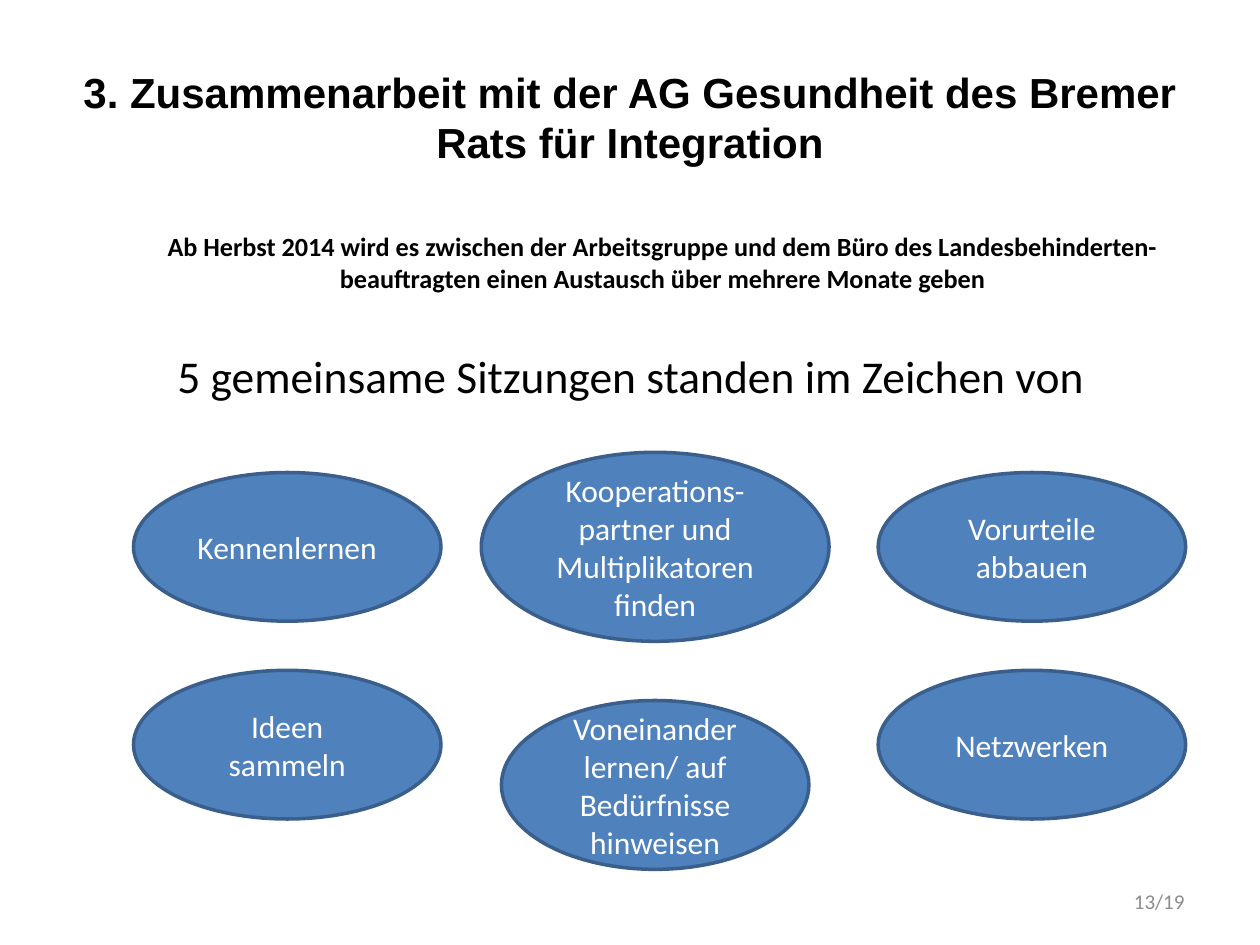
from pptx import Presentation
from pptx.dml.color import RGBColor
from pptx.enum.shapes import MSO_SHAPE
from pptx.enum.text import MSO_ANCHOR, PP_ALIGN
from pptx.oxml.ns import qn
from pptx.util import Inches, Pt

BLACK = RGBColor(0x00, 0x00, 0x00)
WHITE = RGBColor(0xFF, 0xFF, 0xFF)
GREY = RGBColor(0x8C, 0x8C, 0x8C)
BLUE = RGBColor(0x4F, 0x81, 0xBD)
DARK_BLUE = RGBColor(0x3A, 0x5F, 0x8C)

TITLE = {"name": "Arial", "size": Pt(24), "bold": True}
NOTICE = {"size": Pt(15), "bold": True}
LEAD = {"size": Pt(26)}
TOPIC = {"size": Pt(18), "color": WHITE}
NUMBER = {"size": Pt(12), "color": GREY}

# Centre x, centre y, width, height, wording
TOPICS = [
    (2.28, 4.34, 2.44, 1.18, "Kennenlernen"),
    (5.2, 4.34, 2.76, 1.5, "Kooperations-partner und Multiplikatoren finden"),
    (8.19, 4.34, 2.44, 1.18, "Vorurteile abbauen"),
    (2.28, 5.91, 2.44, 1.18, "Ideen sammeln"),
    (5.2, 6.23, 2.44, 1.34, "Voneinander lernen/ auf Bedürfnisse hinweisen"),
    (8.19, 5.91, 2.44, 1.18, "Netzwerken"),
]


def write(para, text, style, align=PP_ALIGN.CENTER):
    """Fill a paragraph with one formatted span."""
    para.alignment = align
    span = para.add_run()
    span.text = text
    values = {"name": "Calibri", "bold": False, "color": BLACK, **style}
    span.font.color.rgb = values.pop("color")
    for name, value in values.items():
        setattr(span.font, name, value)


def add_text_frame(page, box, anchor):
    frame = page.shapes.add_textbox(*map(Inches, box)).text_frame
    frame.word_wrap = True
    frame.vertical_anchor = anchor
    return frame


def add_title(page, box):
    frame = add_text_frame(page, box, MSO_ANCHOR.MIDDLE)
    write(frame.paragraphs[0],
          "3. Zusammenarbeit mit der AG Gesundheit des Bremer Rats für Integration",
          TITLE)


def add_body(page, box):
    frame = add_text_frame(page, box, MSO_ANCHOR.TOP)
    notice = frame.paragraphs[0]
    notice._p.get_or_add_pPr().set("marL", str(Inches(0.5)))
    write(notice,
          "Ab Herbst 2014 wird es zwischen der Arbeitsgruppe und dem Büro des "
          "Landesbehinderten-beauftragten einen Austausch über mehrere Monate geben",
          NOTICE)
    lead = frame.add_paragraph()
    lead.space_before = Pt(31)
    write(lead, "5 gemeinsame Sitzungen standen im Zeichen von", LEAD)


def add_topic(page, box, text):
    oval = page.shapes.add_shape(MSO_SHAPE.OVAL, *map(Inches, box))
    oval.shadow.inherit = False
    oval.fill.solid()
    oval.fill.fore_color.rgb = BLUE
    oval.line.color.rgb = DARK_BLUE
    oval.line.width = Pt(2)
    frame = oval.text_frame
    frame.word_wrap = True
    frame.vertical_anchor = MSO_ANCHOR.MIDDLE
    write(frame.paragraphs[0], text, TOPIC)


def add_page_number(page, box):
    frame = add_text_frame(page, box, MSO_ANCHOR.MIDDLE)
    write(frame.paragraphs[0], "13/19", NUMBER, PP_ALIGN.RIGHT)


def main():
    deck = Presentation()
    deck.slide_width, deck.slide_height = Inches(10), Inches(7.5)
    page = deck.slides.add_slide(deck.slide_layouts[6])

    # Heading and introduction
    add_title(page, (0.5, 0.3, 9, 1.25))
    add_body(page, (0.51, 1.78, 9, 1.6))

    # Topics of the sessions
    for center_x, center_y, width, height, text in TOPICS:
        box = (center_x - width / 2, center_y - height / 2, width, height)
        add_topic(page, box, text)

    # Footer
    add_page_number(page, (7.17, 6.95, 2.33, 0.4))
    deck.save("out.pptx")


if __name__ == "__main__":
    main()
